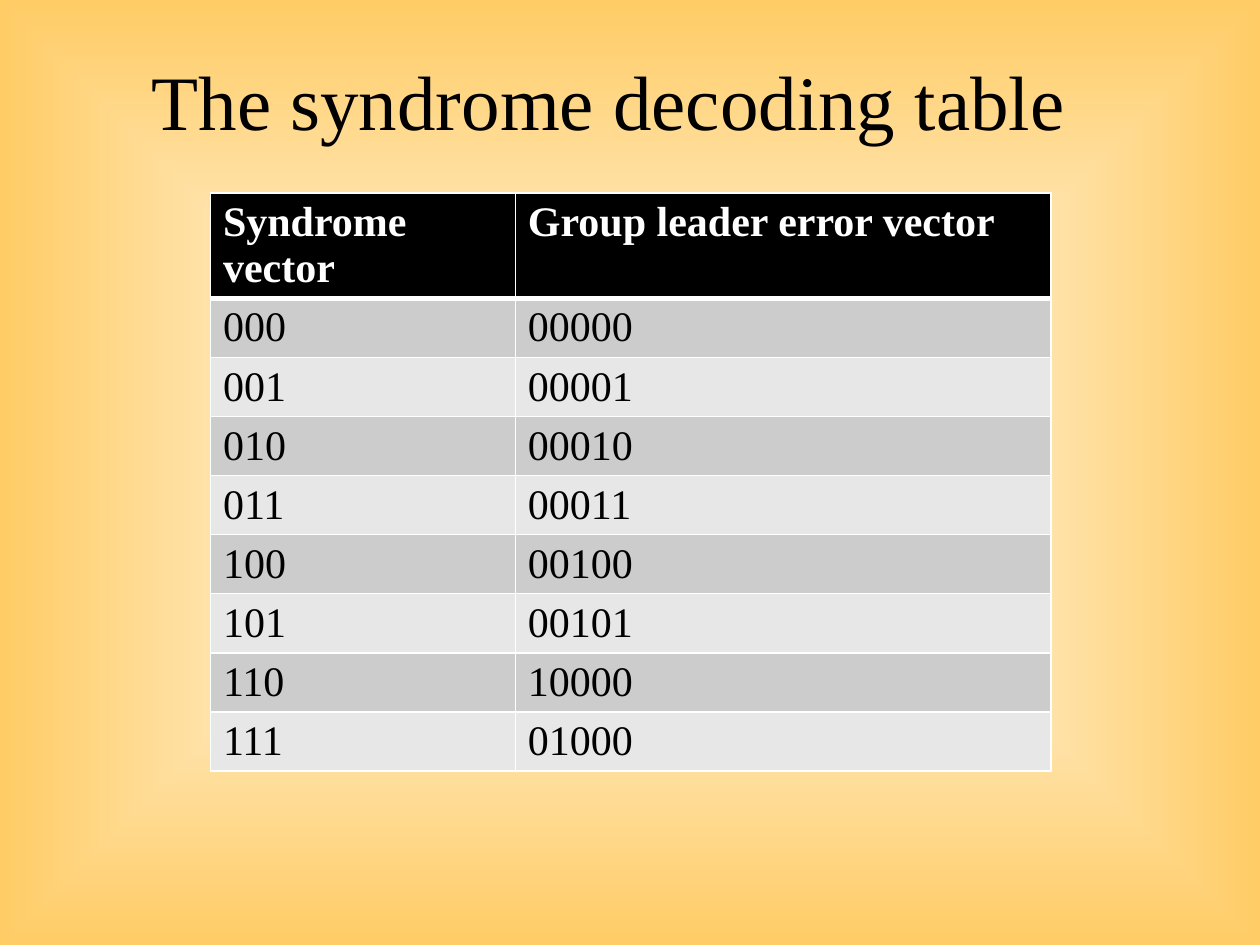
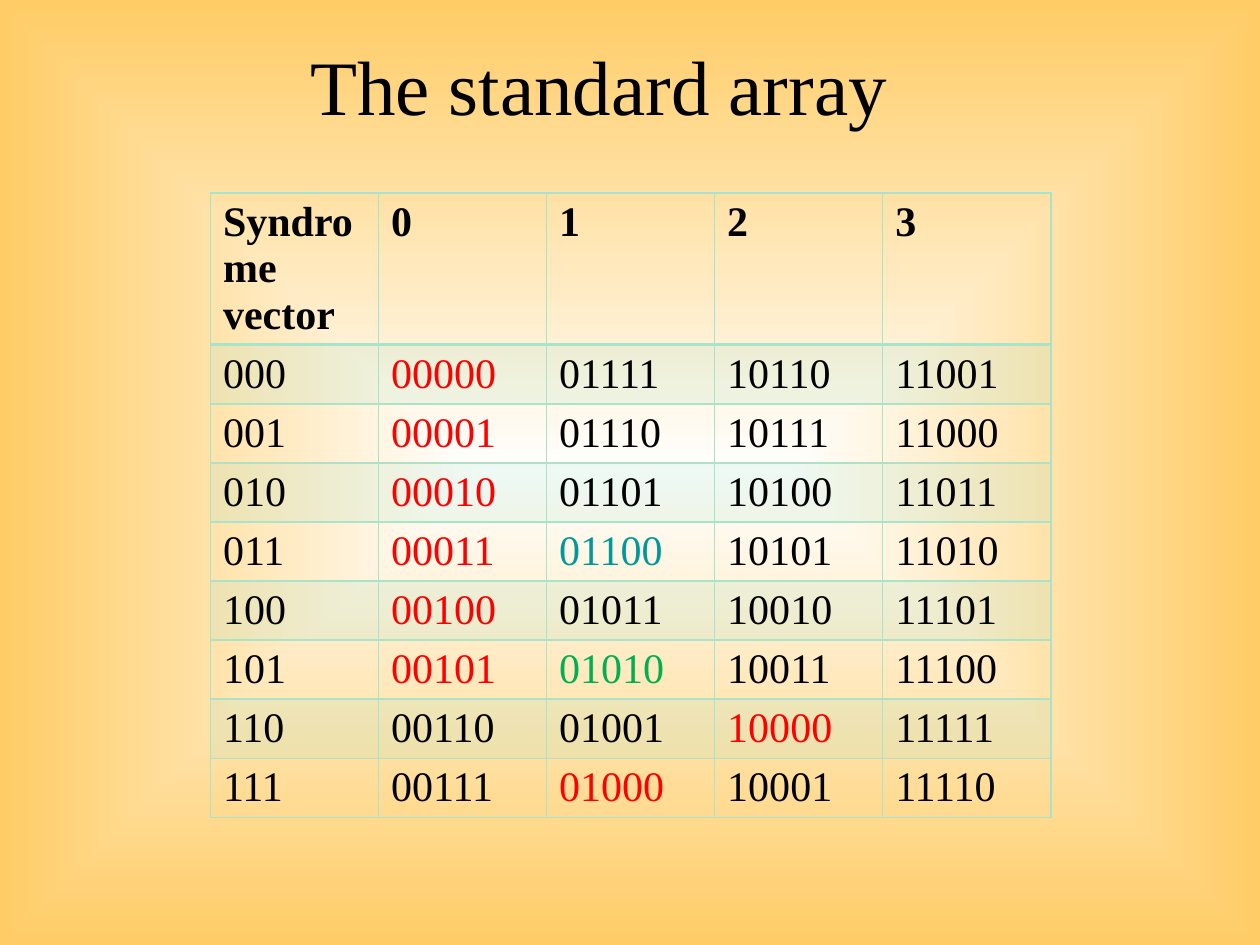
"""Build two slides on syndrome decoding: the decoding table and the standard array."""
import pptx
import pptx.dml.color
import pptx.enum.text
import pptx.oxml.ns
import pptx.util
from lxml import etree

Inches, Pt, qn = pptx.util.Inches, pptx.util.Pt, pptx.oxml.ns.qn

FONT = "Times New Roman"
BLACK, WHITE, RED, TEAL, GREEN = "000000", "FFFFFF", "FF0000", "009999", "00B050"
GOLD, MINT = "FFCC66", "AAE2CA"
TABLE_LEFT, TABLE_TOP, TABLE_WIDTH, ROW_HEIGHT = 1.67, 1.53, 6.67, 0.41

SLIDES = [
    {
        "title": "The syndrome decoding table",
        "title_height": 1.25,
        "columns": [2.42, 4.25],
        "rows": [
            ["Syndrome vector", "Group leader error vector"],
            ["000", "00000"],
            ["001", "00001"],
            ["010", "00010"],
            ["011", "00011"],
            ["100", "00100"],
            ["101", "00101"],
            ["110", "10000"],
            ["111", "01000"],
        ],
        "header": (BLACK, 100),
        "header_text": WHITE,
        "bands": [("CCCCCC", 100), ("E7E7E7", 100)],
        "border": WHITE,
        "header_rule": 3,
        "marked": {},
    },
    {
        "title": "The standard array ",
        "title_height": 1,
        "columns": [TABLE_WIDTH / 5] * 5,
        "rows": [
            ["Syndrome vector", "0", "1", "2", "3"],
            ["000", "00000", "01111", "10110", "11001"],
            ["001", "00001", "01110", "10111", "11000"],
            ["010", "00010", "01101", "10100", "11011"],
            ["011", "00011", "01100", "10101", "11010"],
            ["100", "00100", "01011", "10010", "11101"],
            ["101", "00101", "01010", "10011", "11100"],
            ["110", "00110", "01001", "10000", "11111"],
            ["111", "00111", "01000", "10001", "11110"],
        ],
        "header": None,
        "header_text": BLACK,
        "bands": [(MINT, 20), None],
        "border": MINT,
        "header_rule": 2,
        "marked": {
            **dict.fromkeys(["00000", "00001", "00010", "00011", "00100",
                             "00101", "10000", "01000"], RED),
            "01100": TEAL,
            "01010": GREEN,
        },
    },
]


def paint(color, value):
    color.rgb = pptx.dml.color.RGBColor.from_string(value)


def style_text(tf, size, color, bold=False):
    for r in tf.paragraphs[0].runs:
        r.font.name, r.font.size, r.font.bold = FONT, Pt(size), bold
        paint(r.font.color, color)


def set_background(master):
    fill = master.background.fill
    fill.gradient()
    for stop, position, color in zip(fill.gradient_stops, (0, 1), (WHITE, GOLD)):
        stop.position = position
        paint(stop.color, color)
    grad = master.element.find(".//" + qn("a:gradFill"))
    grad.remove(grad.find(qn("a:lin")))
    shape_path = etree.Element(qn("a:path"), path="shape")
    etree.SubElement(shape_path, qn("a:fillToRect"),
                     dict.fromkeys("ltrb", "50000"))
    grad.find(qn("a:gsLst")).addnext(shape_path)


def set_borders(cell, color, top, bottom):
    tcPr = cell._tc.get_or_add_tcPr()
    for side, width in (("L", 1), ("R", 1), ("T", top), ("B", bottom)):
        ln = etree.SubElement(tcPr, qn("a:ln" + side), w=str(Pt(width)))
        solid = etree.SubElement(ln, qn("a:solidFill"))
        etree.SubElement(solid, qn("a:srgbClr"), val=color)


def set_fill(cell, fill):
    if fill is None:
        cell.fill.background()
        return
    color, opacity = fill
    cell.fill.solid()
    paint(cell.fill.fore_color, color)
    if opacity < 100:
        srgb = cell._tc.tcPr.find(qn("a:solidFill") + "/" + qn("a:srgbClr"))
        etree.SubElement(srgb, qn("a:alpha"), val=str(opacity * 1000))


def add_title(s, text, height):
    sp = s.shapes.title
    sp.left, sp.top = Inches(0.58), Inches(0.17)
    sp.width, sp.height = Inches(8.5), Inches(height)
    tf = sp.text_frame
    tf.text = text
    tf.vertical_anchor = pptx.enum.text.MSO_ANCHOR.MIDDLE
    tf.paragraphs[0].alignment = pptx.enum.text.PP_ALIGN.CENTER
    style_text(tf, 44, BLACK)


def add_code_table(s, data):
    rows, columns = data["rows"], data["columns"]
    table = s.shapes.add_table(
        len(rows), len(columns), Inches(TABLE_LEFT), Inches(TABLE_TOP),
        Inches(TABLE_WIDTH), Inches(ROW_HEIGHT * len(rows))).table
    for column, width in zip(table.columns, columns):
        column.width = Inches(width)
    for i, row in enumerate(rows):
        top = data["header_rule"] if i == 1 else 1
        bottom = data["header_rule"] if i == 0 else 1
        fill = data["bands"][(i - 1) % 2] if i else data["header"]
        for j, text in enumerate(row):
            cell = table.cell(i, j)
            cell.text_frame.text = text
            color = data["marked"].get(text, BLACK) if i else data["header_text"]
            style_text(cell.text_frame, 24, color, bold=i == 0)
            set_borders(cell, data["border"], top, bottom)
            set_fill(cell, fill)


def main():
    prs = pptx.Presentation()
    prs.slide_width, prs.slide_height = Inches(10), Inches(7.5)
    set_background(prs.slide_master)
    for data in SLIDES:
        s = prs.slides.add_slide(prs.slide_layouts[5])
        add_title(s, data["title"], data["title_height"])
        add_code_table(s, data)
    prs.save("out.pptx")


if __name__ == "__main__":
    main()
